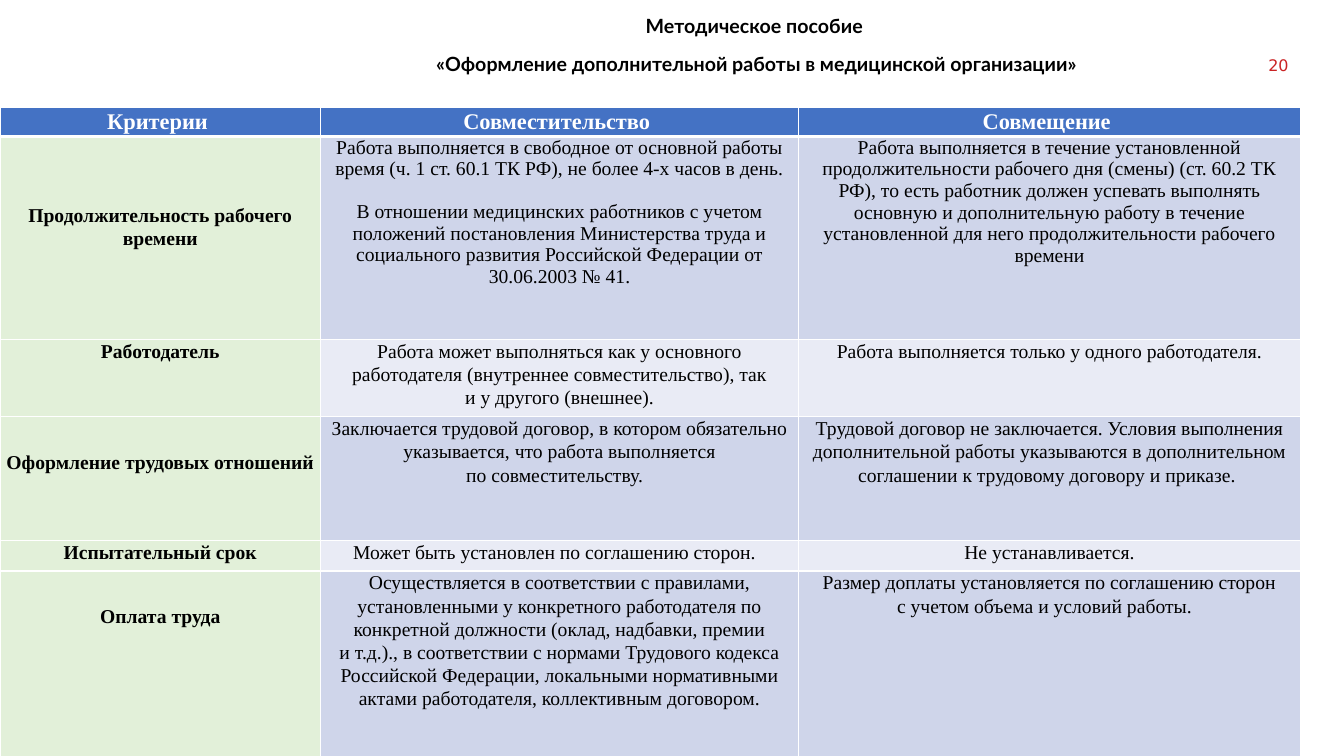
"""Build the slide that compares secondary employment with combined duties."""
from dataclasses import dataclass

import lxml.etree
import pptx
import pptx.dml.color
import pptx.enum.text
import pptx.oxml.ns
import pptx.util

RGBColor = pptx.dml.color.RGBColor
Inches = pptx.util.Inches
Pt = pptx.util.Pt
Align = pptx.enum.text.PP_ALIGN

BLACK = RGBColor(0x00, 0x00, 0x00)
WHITE = RGBColor(0xFF, 0xFF, 0xFF)
RED = RGBColor(0xCA, 0x23, 0x24)
HEADER_BLUE = RGBColor(0x44, 0x72, 0xC4)
LABEL_GREEN = RGBColor(0xE2, 0xF0, 0xD9)
BANDS = (RGBColor(0xCF, 0xD5, 0xEA), RGBColor(0xE9, 0xEB, 0xF5))

TIE = "~"
NO_BREAK_SPACE = chr(160)
TABLE_FONT = "Times New Roman"
TABLE_TOP = 1.07
COLUMN_WIDTHS = (3.18, 4.74, 4.98)
HEADER_HEIGHT = 0.27
HEADINGS = ("Критерии ", "Совместительство ", "Совмещение ")
TITLE_LINES = (
    "Методическое пособие ",
    "«Оформление дополнительной работы в медицинской организации»",
)


@dataclass(frozen=True)
class TextStyle:
    font: str
    size: float
    color: RGBColor
    bold: bool = False
    align: Align = Align.CENTER
    line_spacing: float = 1.0
    space_after: float = 0


@dataclass(frozen=True)
class Criterion:
    label: str
    height: float
    secondary_job: tuple[str, ...]
    combined_job: tuple[str, ...]
    label_drop: float = 0
    spaced: bool = False


TITLE = TextStyle("Lato", 14, BLACK, bold=True, space_after=10)
NUMBER = TextStyle("DejaVu Sans", 11.4, RED, align=Align.RIGHT)
HEADING = TextStyle(TABLE_FONT, 16, WHITE, True, line_spacing=1.07, space_after=8)
LABEL = TextStyle(TABLE_FONT, 14, BLACK, True, line_spacing=1.07, space_after=8)
BODY = TextStyle(TABLE_FONT, 14, BLACK, line_spacing=1.07, space_after=8)
SPACED_BODY = TextStyle(TABLE_FONT, 14, BLACK, space_after=15)

CRITERIA = (
    Criterion(
        "Продолжительность рабочего времени",
        2.01,
        (
            "Работа выполняется в~свободное от~основной работы время "
            "(ч.~1~ст. 60.1 ТК РФ), не~более 4-х часов в~день.",
            "В отношении медицинских работников с учетом положений постановления "
            "Министерства труда и социального развития Российской Федерации "
            "от 30.06.2003 № 41.",
        ),
        (
            "Работа выполняется в~течение установленной продолжительности рабочего "
            "дня (смены) (ст. 60.2 ТК РФ), то~есть работник должен успевать "
            "выполнять основную и~дополнительную работу в~течение установленной "
            "для него продолжительности рабочего времени",
        ),
        label_drop=0.66,
        spaced=True,
    ),
    Criterion(
        "Работодатель",
        0.77,
        (
            "Работа может выполняться как у~основного работодателя (внутреннее "
            "совместительство), так и~у~другого (внешнее).",
        ),
        ("Работа выполняется только у~одного работодателя.",),
    ),
    Criterion(
        "Оформление трудовых отношений",
        1.23,
        (
            "Заключается трудовой договор, в~котором обязательно указывается, "
            "что~работа выполняется по~совместительству. ~",
        ),
        (
            "Трудовой договор не~заключается. Условия выполнения дополнительной "
            "работы указываются в~дополнительном соглашении к трудовому договору "
            "и приказе. ",
        ),
        label_drop=0.33,
    ),
    Criterion(
        "Испытательный срок",
        0.3,
        ("Может быть установлен по~соглашению сторон. ~",),
        ("Не~устанавливается.",),
    ),
    Criterion(
        "Оплата труда",
        1.85,
        (
            "Осуществляется в~соответствии с~правилами, установленными у~конкретного "
            "работодателя по конкретной должности (оклад, надбавки, премии и~т.д.)., "
            "в соответствии с нормами Трудового кодекса Российской Федерации, "
            "локальными нормативными актами работодателя, коллективным договором.",
        ),
        (
            "Размер доплаты установляется по~соглашению сторон с~учетом объема "
            "и~условий работы. ~",
        ),
        label_drop=0.33,
    ),
)


def write_text(frame: pptx.text.text.TextFrame, lines: tuple[str, ...], style: TextStyle) -> None:
    """Fill a text frame with one styled paragraph for each line, ties becoming hard spaces."""
    frame.word_wrap = True
    for index, line in enumerate(lines):
        paragraph = frame.add_paragraph() if index else frame.paragraphs[0]
        paragraph.alignment = style.align
        paragraph.line_spacing = style.line_spacing
        paragraph.space_after = Pt(style.space_after)
        run = paragraph.add_run()
        run.text = line.replace(TIE, NO_BREAK_SPACE)
        run.font.name = style.font
        run.font.size = Pt(style.size)
        run.font.bold = style.bold
        run.font.color.rgb = style.color


def add_borders(cell: pptx.table._Cell, bottom_width: float) -> None:
    """Give a cell white borders with the chosen bottom width."""
    qualified = pptx.oxml.ns.qn
    properties = cell._tc.get_or_add_tcPr()
    for side, width in (("L", 1), ("R", 1), ("T", 1), ("B", bottom_width)):
        line = lxml.etree.SubElement(properties, qualified(f"a:ln{side}"), w=str(Pt(width)))
        fill = lxml.etree.SubElement(line, qualified("a:solidFill"))
        lxml.etree.SubElement(fill, qualified("a:srgbClr"), val=str(WHITE))


def fill_cell(
    cell: pptx.table._Cell,
    lines: tuple[str, ...],
    style: TextStyle,
    color: RGBColor,
    drop: float = 0,
    bottom_width: float = 1,
) -> None:
    """Set the borders, fill, margins and text of a table cell."""
    add_borders(cell, bottom_width)
    cell.fill.solid()
    cell.fill.fore_color.rgb = color
    cell.margin_left = cell.margin_right = Inches(0.04)
    cell.margin_top, cell.margin_bottom = Inches(drop), 0
    write_text(cell.text_frame, lines, style)


def add_comparison(slide: pptx.slide.Slide) -> None:
    """Add the table of criteria."""
    heights = (HEADER_HEIGHT, *(criterion.height for criterion in CRITERIA))
    table = slide.shapes.add_table(
        len(heights), len(COLUMN_WIDTHS), 0, Inches(TABLE_TOP),
        Inches(sum(COLUMN_WIDTHS)), Inches(sum(heights)),
    ).table
    table.horz_banding = False
    for column, width in zip(table.columns, COLUMN_WIDTHS):
        column.width = Inches(width)
    for row, height in zip(table.rows, heights):
        row.height = Inches(height)
    for column_index, heading in enumerate(HEADINGS):
        fill_cell(table.cell(0, column_index), (heading,), HEADING, HEADER_BLUE, bottom_width=3)
    for index, criterion in enumerate(CRITERIA):
        label, secondary, combined = table.rows[index + 1].cells
        style = SPACED_BODY if criterion.spaced else BODY
        band = BANDS[index % len(BANDS)]
        fill_cell(label, (criterion.label,), LABEL, LABEL_GREEN, criterion.label_drop)
        fill_cell(secondary, criterion.secondary_job, style, band)
        fill_cell(combined, criterion.combined_job, style, band)


def main() -> None:
    """Create and save the presentation."""
    presentation = pptx.Presentation()
    presentation.slide_width, presentation.slide_height = Inches(13.33), Inches(7.5)
    slide = presentation.slides.add_slide(presentation.slide_layouts[5])
    title = slide.shapes.title
    title.left, title.top = Inches(3.09), Inches(0.09)
    title.width, title.height = Inches(8.83), Inches(0.71)
    title.text_frame.vertical_anchor = pptx.enum.text.MSO_ANCHOR.TOP
    title.text_frame.auto_size = pptx.enum.text.MSO_AUTO_SIZE.SHAPE_TO_FIT_TEXT
    write_text(title.text_frame, TITLE_LINES, TITLE)
    number = slide.shapes.add_textbox(Inches(12.47), Inches(0.55), Inches(0.31), Inches(0.24))
    frame = number.text_frame
    frame.margin_left = frame.margin_right = frame.margin_top = frame.margin_bottom = 0
    write_text(frame, ("20",), NUMBER)
    add_comparison(slide)
    presentation.save("out.pptx")


if __name__ == "__main__":
    main()
